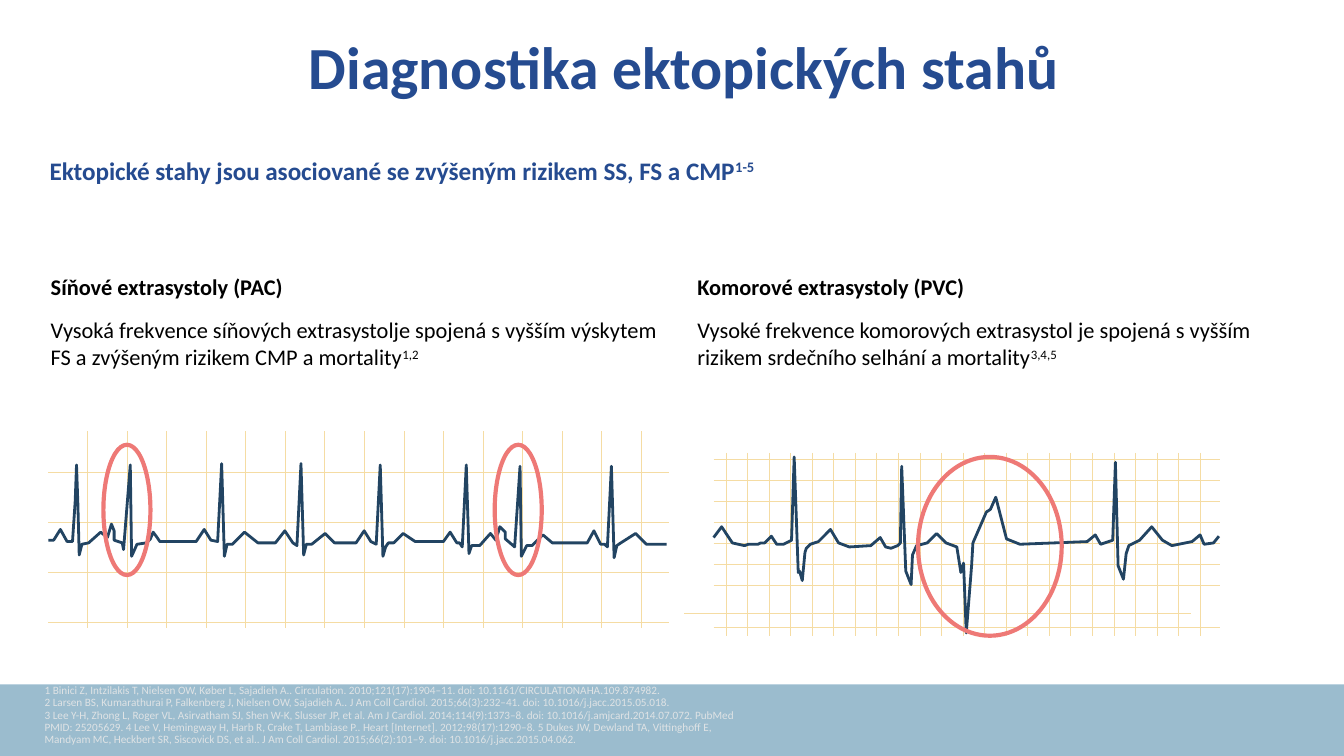
import dataclasses

import pptx
import pptx.dml.color
import pptx.enum.shapes
import pptx.enum.text
import pptx.oxml
import pptx.oxml.ns
import pptx.util
from lxml import etree

Pt = pptx.util.Pt
Rgb = pptx.dml.color.RGBColor.from_string
Anchor = pptx.enum.text.MSO_ANCHOR
Shape = pptx.enum.shapes.MSO_SHAPE


@dataclasses.dataclass
class Theme:
    font: str = "Calibri"
    blue: str = "254B90"
    black: str = "000000"
    pale: str = "DFE3E5"
    band: str = "76A4BD"
    grid: str = "F5DCA3"
    wave: str = "224462"
    ring: str = "EE7976"
    title: float = 32
    lead: float = 13.5
    body: float = 12
    note: float = 6


def write(para, text, size, color, font="Calibri", bold=False, raised=False):
    run = para.add_run()
    run.text = text
    run.font.name = font
    run.font.size = Pt(size)
    run.font.bold = bold
    run.font.color.rgb = Rgb(color)
    if raised:
        run.font._element.set("baseline", "30000")


class Deck:
    def __init__(self, theme):
        self.theme = theme
        self.show = pptx.Presentation()
        self.show.slide_width = Pt(720)
        self.show.slide_height = Pt(405)
        self.slide = self.show.slides.add_slide(self.show.slide_layouts[5])
        self.shapes = self.slide.shapes

    def fill(self, frame, paras, size, color, anchor=Anchor.TOP, inset=(0, 0),
             gap=0, pitch=1.0, align=None):
        frame.word_wrap = True
        frame.auto_size = pptx.enum.text.MSO_AUTO_SIZE.NONE
        frame.vertical_anchor = anchor
        frame.margin_left = frame.margin_right = Pt(inset[0])
        frame.margin_top = frame.margin_bottom = Pt(inset[1])
        for i, runs in enumerate(paras):
            para = frame.add_paragraph() if i else frame.paragraphs[0]
            para.space_before = Pt(gap if i else 0)
            para.line_spacing = pitch
            para.alignment = align
            for text, style in runs:
                write(para, text, size, color, font=self.theme.font, **style)

    def title(self, box, text):
        shape = self.shapes.title
        shape.left, shape.top, shape.width, shape.height = map(Pt, box)
        self.fill(shape.text_frame, [[(text, BOLD)]], self.theme.title,
                  self.theme.blue, anchor=Anchor.MIDDLE, inset=(4.5, 2.25),
                  pitch=0.9, align=pptx.enum.text.PP_ALIGN.CENTER)

    def text(self, box, paras, size, color, **style):
        shape = self.shapes.add_textbox(*map(Pt, box))
        self.fill(shape.text_frame, paras, size, color, **style)

    def band(self, box):
        shape = self.shapes.add_shape(Shape.RECTANGLE, *map(Pt, box))
        shape.shadow.inherit = False
        shape.fill.solid()
        shape.fill.fore_color.rgb = Rgb(self.theme.band)
        shape.line.fill.background()
        tint = shape._element.spPr.find(".//" + pptx.oxml.ns.qn("a:srgbClr"))
        etree.SubElement(tint, pptx.oxml.ns.qn("a:alpha"), val="73000")

    def group(self):
        return self.shapes.add_group_shape().shapes

    def line(self, group, *ends):
        line = group.add_connector(
            pptx.enum.shapes.MSO_CONNECTOR.STRAIGHT, *map(Pt, ends))
        line.line.color.rgb = Rgb(self.theme.grid)
        line.line.width = Pt(0.25)
        etree.SubElement(line._element.spPr, pptx.oxml.ns.qn("a:effectLst"))

    def grid(self, group, cols, rows, wide, tall):
        for x in cols:
            self.line(group, x, tall[0], x, tall[1])
        for y in rows:
            self.line(group, wide[0], y, wide[1], y)

    def stroke(self, shape, color, width):
        shape.shadow.inherit = False
        shape.fill.background()
        shape.line.color.rgb = Rgb(color)
        shape.line.width = Pt(width)

    def wave(self, group, points):
        path = group.build_freeform(*points[0], scale=Pt(0.72))
        path.add_line_segments(points[1:], close=False)
        self.stroke(path.convert_to_shape(), self.theme.wave, 1.5)

    def ring(self, group, box):
        shape = group.add_shape(Shape.OVAL, *map(Pt, box))
        self.stroke(shape, self.theme.ring, 2.25)


PLAIN = {}
BOLD = {"bold": True}
RAISED = {"raised": True}

PARTS = [
    (27.2, "Síňové extrasystoly (PAC)",
     "Vysoká frekvence síňových extrasystolje spojená s vyšším výskytem FS a zvýšeným rizikem CMP a mortality",
     "1,2"),
    (373.6, "Komorové extrasystoly (PVC)",
     "Vysoké frekvence komorových extrasystol je spojená s vyšším rizikem srdečního selhání a mortality",
     "3,4,5"),
]

NOTES = [
    "1 Binici Z, Intzilakis T, Nielsen OW, Køber L, Sajadieh A.. Circulation. 2010;121(17):1904–11. doi: 10.1161/CIRCULATIONAHA.109.874982.",
    "2 Larsen BS, Kumarathurai P, Falkenberg J, Nielsen OW, Sajadieh A.. J Am Coll Cardiol. 2015;66(3):232–41. doi: 10.1016/j.jacc.2015.05.018.",
    "3 Lee Y-H, Zhong L, Roger VL, Asirvatham SJ, Shen W-K, Slusser JP, et al. Am J Cardiol. 2014;114(9):1373–8. doi: 10.1016/j.amjcard.2014.07.072. PubMed PMID: 25205629. "
    "4 Lee V, Hemingway H, Harb R, Crake T, Lambiase P.. Heart [Internet]. 2012;98(17):1290–8. "
    "5 Dukes JW, Dewland TA, Vittinghoff E, Mandyam MC, Heckbert SR, Siscovick DS, et al.. J Am Coll Cardiol. 2015;66(2):101–9. doi: 10.1016/j.jacc.2015.04.062.",
]

PAC = [
    (36, 402), (40, 402), (45, 394), (50, 403), (54, 403), (56, 373), (57, 346),
    (58, 374), (59, 413), (61, 405), (66, 404), (75, 396), (80, 400), (83, 390),
    (85, 395), (85, 402), (91, 404), (92, 409), (97, 346), (98, 414), (102, 405),
    (109, 404), (112, 401), (114, 396), (117, 400), (119, 403), (146, 403),
    (152, 394), (157, 402), (162, 403), (165, 345), (167, 414), (169, 405),
    (173, 405), (182, 396), (192, 404), (205, 404), (212, 395), (218, 404),
    (221, 406), (224, 345), (226, 413), (228, 405), (232, 405), (242, 397),
    (249, 404), (265, 404), (271, 395), (276, 403), (280, 405), (283, 346),
    (285, 414), (287, 407), (289, 404), (293, 404), (300, 397), (309, 403),
    (330, 403), (335, 396), (340, 404), (342, 404), (344, 407), (347, 346),
    (349, 412), (351, 406), (357, 406), (365, 397), (369, 402), (372, 392),
    (376, 396), (376, 401), (383, 407), (387, 347), (388, 414), (392, 406),
    (396, 406), (404, 398), (411, 404), (437, 404), (442, 395), (447, 405),
    (450, 405), (452, 407), (455, 347), (457, 415), (459, 406), (462, 404),
    (473, 397), (481, 405), (496, 405),
]

PVC = [
    (531, 400), (537, 392), (545, 404), (554, 406), (557, 405), (564, 405),
    (566, 404), (569, 404), (574, 399), (578, 405), (583, 405), (587, 403),
    (589, 402), (591, 340), (594, 426), (595, 425), (597, 432), (599, 411),
    (600, 408), (603, 405), (609, 403), (618, 394), (624, 404), (632, 407),
    (648, 406), (655, 400), (659, 407), (663, 408), (668, 406), (670, 404),
    (671, 347), (674, 425), (678, 435), (679, 413), (682, 406), (690, 404),
    (697, 397), (704, 404), (712, 407), (715, 426), (717, 419), (719, 471),
    (723, 421), (724, 404), (734, 381), (737, 379), (741, 370), (749, 401),
    (759, 405), (809, 403), (815, 398), (819, 405), (828, 402), (830, 344),
    (832, 421), (836, 431), (838, 412), (840, 406), (848, 402), (857, 392),
    (865, 402), (872, 406), (887, 403), (893, 398), (896, 405), (903, 404),
    (907, 399),
]


def main():
    theme = Theme()
    deck = Deck(theme)
    deck.band((0, 366.6, 720, 38.4))
    for left, head, body, mark in PARTS:
        deck.text((left, 146.2, 332, 52.6),
                  [[(head, BOLD)], [(body, PLAIN), (mark, RAISED)]],
                  theme.body, theme.black, gap=9)
    deck.title((26.6, 17.3, 679.7, 40.3), "Diagnostika ektopických stahů")
    lead = "Ektopické stahy jsou asociované se zvýšeným rizikem SS, FS a CMP"
    deck.text((26.6, 85, 679.7, 41.8), [[(lead, BOLD), ("1-5", BOLD | RAISED)]],
              theme.lead, theme.blue, pitch=0.9)
    deck.text((19.4, 362.9, 381.6, 38.9), [[(note, PLAIN)] for note in NOTES],
              theme.note, theme.pale, anchor=Anchor.BOTTOM, inset=(4.5, 2.25),
              pitch=0.9)

    right = deck.group()
    deck.grid(right, [388.8 + 11.55 * i for i in range(23)],
              [246.24 + 11.25 * i for i in range(9) if i != 7],
              (382.3, 653.8), (242.6, 340.6))
    deck.line(right, 366.5, 328.3, 637.9, 328.3)
    deck.wave(right, PVC)
    deck.ring(right, (491.8, 244.8, 77, 95.8))

    left = deck.group()
    deck.grid(left, [46.8 + 21.19 * i for i in range(15)],
              [253.1 + 26.8 * i for i in range(4)],
              (25.9, 358.6), (231.1, 336.2))
    deck.wave(left, PAC)
    for x in (265, 55.4):
        deck.ring(left, (x, 238.3, 25.2, 69.8))

    deck.show.save("out.pptx")


if __name__ == "__main__":
    main()
